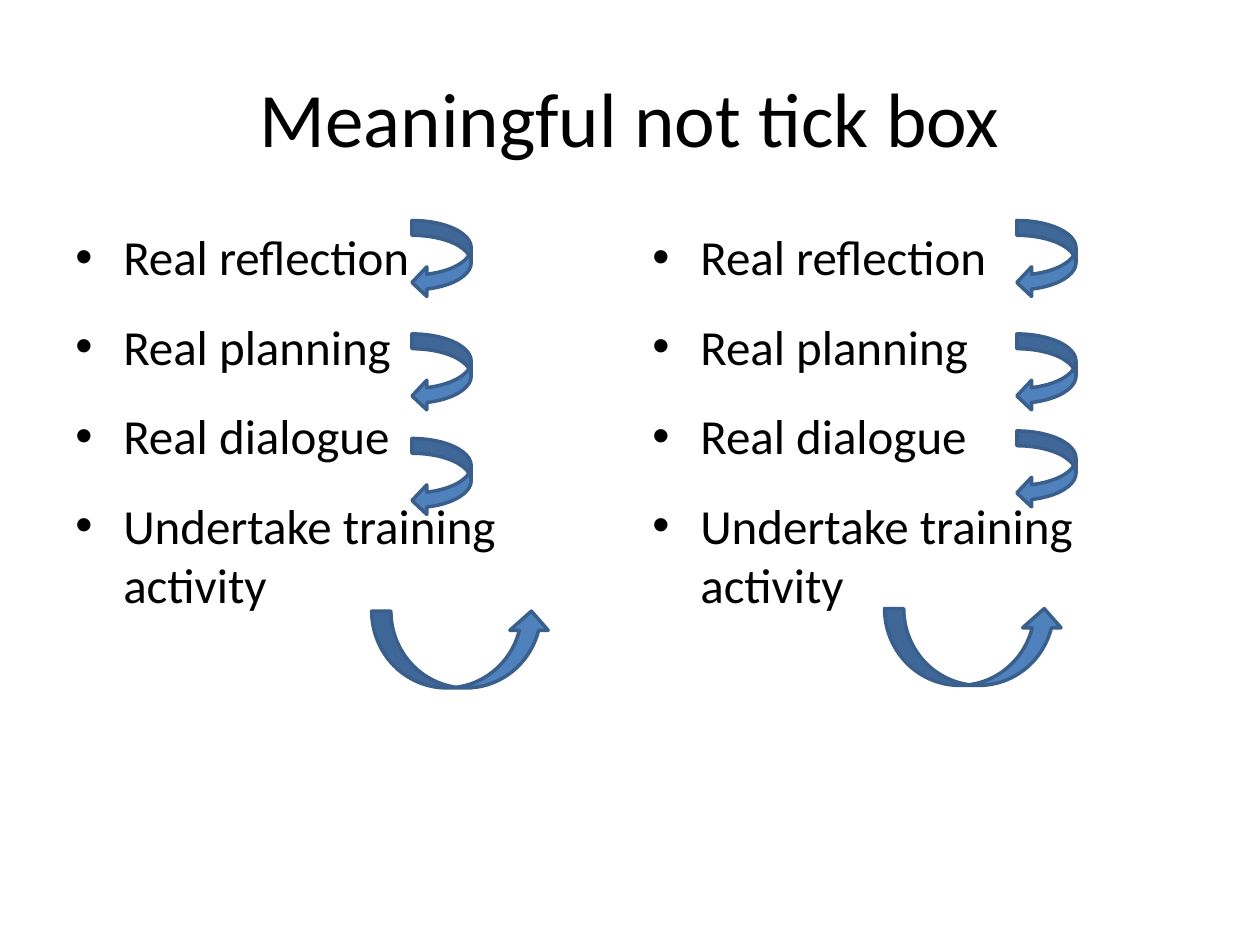
"""Build the "Meaningful not tick box" slide: two bullet columns with curved arrows."""
from dataclasses import dataclass

from lxml import etree
from pptx import Presentation
from pptx.dml.color import RGBColor
from pptx.enum.shapes import MSO_SHAPE
from pptx.enum.text import MSO_ANCHOR, PP_ALIGN
from pptx.oxml.ns import qn
from pptx.slide import Slide
from pptx.text.text import _Paragraph
from pptx.util import Inches, Pt

LEFT_ARROW = MSO_SHAPE.CURVED_LEFT_ARROW
UP_ARROW = MSO_SHAPE.CURVED_UP_ARROW
TOP, MIDDLE = MSO_ANCHOR.TOP, MSO_ANCHOR.MIDDLE
LEFT, CENTER = PP_ALIGN.LEFT, PP_ALIGN.CENTER

BLACK = RGBColor(0x00, 0x00, 0x00)
BLUE = RGBColor(0x4F, 0x81, 0xBD)
DARK_BLUE = RGBColor(0x3A, 0x5F, 0x8C)
FONT = "Calibri"
STEPS = [
    "Real reflection",
    "Real planning",
    "Real dialogue",
    "Undertake training activity",
]


@dataclass(frozen=True)
class Area:
    left: float
    top: float
    width: float
    height: float


@dataclass(frozen=True)
class Column:
    text_left: float
    arrow_left: float
    arrow_tops: tuple[float, ...]
    return_left: float
    return_top: float


COLUMNS = [
    Column(0.5, 3.27, (1.75, 2.65, 3.48), 2.95, 4.85),
    Column(5.08, 8.07, (1.75, 2.65, 3.42), 7.02, 4.83),
]


def add_bullet(para: _Paragraph) -> None:
    properties = para._p.get_or_add_pPr()
    properties.set("marL", str(Inches(0.38)))
    properties.set("indent", str(Inches(-0.38)))
    etree.SubElement(properties, qn("a:buFont"), typeface="Arial")
    etree.SubElement(properties, qn("a:buChar"), char="•")


def add_text(page: Slide, lines: list[str], area: Area, *, size: float,
             align: PP_ALIGN = LEFT, anchor: MSO_ANCHOR = TOP,
             bullets: bool = False, before: float = 0, after: float = 0) -> None:
    box = page.shapes.add_textbox(Inches(area.left), Inches(area.top),
                                  Inches(area.width), Inches(area.height))
    frame = box.text_frame
    frame.word_wrap = True
    frame.vertical_anchor = anchor
    for index, line in enumerate(lines):
        para = frame.add_paragraph() if index else frame.paragraphs[0]
        if bullets:
            add_bullet(para)
        para.alignment = align
        para.space_before = Pt(before if index else 0)
        para.space_after = Pt(after)
        span = para.add_run()
        span.text = line
        span.font.name = FONT
        span.font.size = Pt(size)
        span.font.color.rgb = BLACK


def add_arrow(page: Slide, kind: MSO_SHAPE, area: Area) -> None:
    arrow = page.shapes.add_shape(kind, Inches(area.left), Inches(area.top),
                                  Inches(area.width), Inches(area.height))
    arrow.shadow.inherit = False
    arrow.fill.solid()
    arrow.fill.fore_color.rgb = BLUE
    arrow.line.color.rgb = DARK_BLUE
    arrow.line.width = Pt(2)


def main() -> None:
    deck = Presentation()
    deck.slide_width = Inches(10)
    deck.slide_height = Inches(7.5)
    page = deck.slides.add_slide(deck.slide_layouts[6])
    add_text(page, ["Meaningful not tick box"], Area(0.5, 0.3, 9, 1.25),
             size=44, align=CENTER, anchor=MIDDLE)
    for column in COLUMNS:
        add_text(page, STEPS, Area(column.text_left, 1.75, 4.42, 4.95),
                 size=28, bullets=True, before=5.6, after=12)
    for column in COLUMNS:
        for top in column.arrow_tops:
            add_arrow(page, LEFT_ARROW, Area(column.arrow_left, top, 0.47, 0.61))
        add_arrow(page, UP_ARROW,
                  Area(column.return_left, column.return_top, 1.42, 0.61))
    deck.save("out.pptx")


if __name__ == "__main__":
    main()
